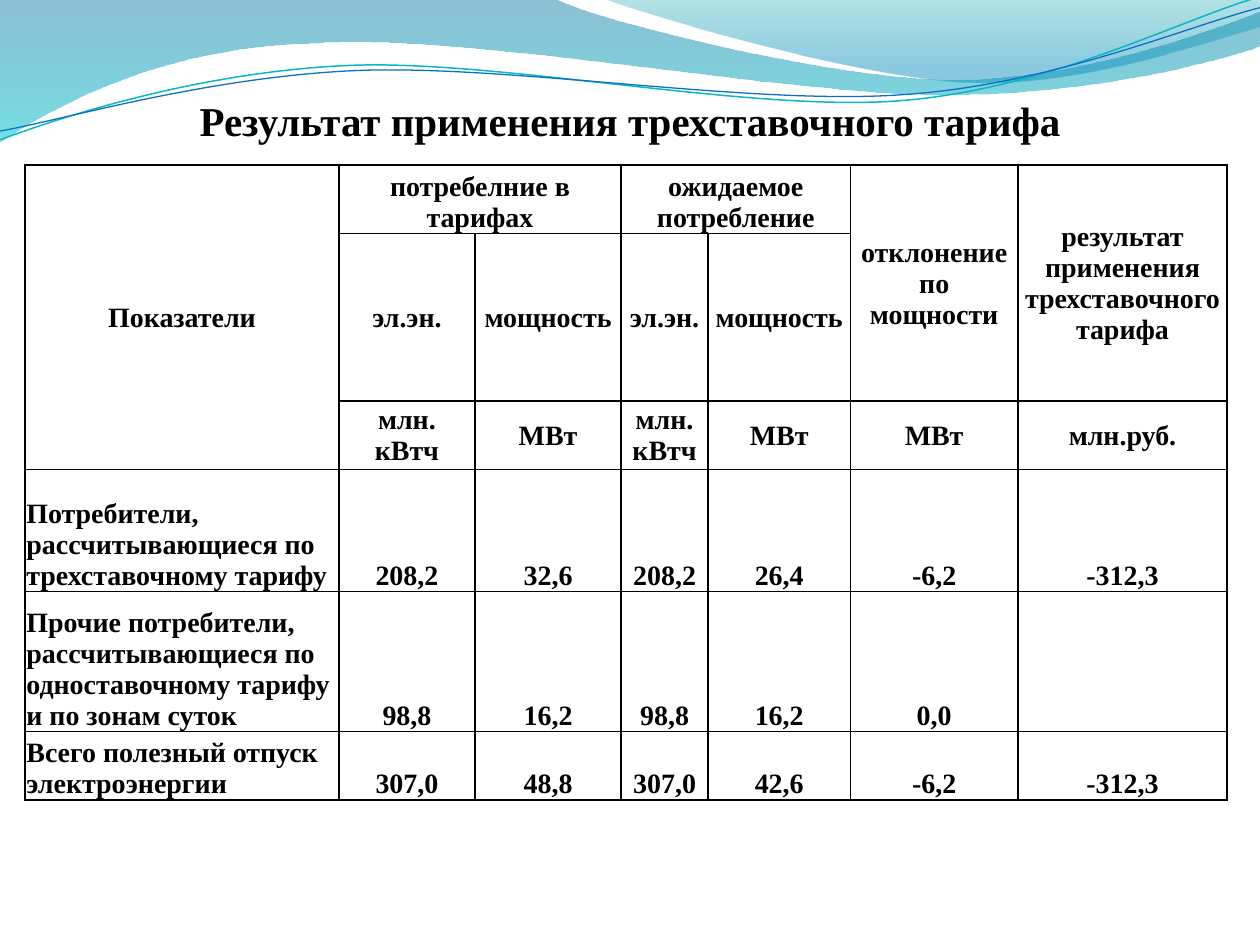
"""Build a slide with a three-rate tariff results table under a wave header."""
from math import cos, radians, sin
from lxml.etree import SubElement
from pptx import Presentation
from pptx.dml.color import RGBColor
from pptx.enum.text import MSO_ANCHOR, PP_ALIGN
from pptx.oxml import parse_xml
from pptx.oxml.ns import nsdecls, qn
from pptx.util import Inches, Pt

BLACK = RGBColor(0, 0, 0)
WHITE = RGBColor(255, 255, 255)
DEEP_BLUE = RGBColor(0x00, 0x74, 0xA1)
CYAN = RGBColor(0x00, 0xC6, 0xCF)
TEAL = RGBColor(0x00, 0xA1, 0xA9)
SKY = RGBColor(0x00, 0x8B, 0xBF)
LINE_TEAL = RGBColor(0x0A, 0xB8, 0xBF)
LINE_BLUE = RGBColor(0x0F, 0x6F, 0xC6)
FONT = "Times New Roman"

TITLE = "Результат применения трехставочного тарифа"
HEADER = [
    ["Показатели", "потребелние в тарифах", "", "ожидаемое потребление", "",
     "отклонение по мощности", "результат применения трехставочного тарифа"],
    ["", "эл.эн.", "мощность", "эл.эн.", "мощность", "", ""],
    ["", "млн.\nкВтч", "МВт", "млн.\nкВтч", "МВт", "МВт", "млн.руб."],
]
BODY = [
    ["Потребители, рассчитывающиеся по трехставочному тарифу",
     "208,2", "32,6", "208,2", "26,4", "-6,2", "-312,3"],
    ["Прочие потребители, рассчитывающиеся по одноставочному тарифу и по зонам суток",
     "98,8", "16,2", "98,8", "16,2", "0,0", ""],
    ["Всего полезный отпуск электроэнергии",
     "307,0", "48,8", "307,0", "42,6", "-6,2", "-312,3"],
]
MERGES = [((0, 0), (2, 0)), ((0, 1), (0, 2)), ((0, 3), (0, 4)),
          ((0, 5), (1, 5)), ((0, 6), (1, 6))]
COLS = [2.49, 1.08, 1.16, 0.69, 1.13, 1.33, 1.66]
ROWS = [0.47, 1.33, 0.5, 0.97, 1.11, 0.5]

BANDS = [
    ([[(0, 0)], [(4.4, -0.01)],
      [(4.76, 0.17), (6.64, 0.63), (7.58, 0.63)],
      [(8.53, 0.63), (9.58, 0.26), (10, 0.09)], [(10.01, 0.36)],
      [(9.83, 0.44), (8.7, 0.76), (7.46, 0.75)],
      [(6.22, 0.75), (3.82, 0.28), (2.57, 0.34)],
      [(1.29, 0.36), (0.46, 0.83), (-0.01, 1.13)], [(0, 0)]],
     [(0, DEEP_BLUE, 45), (1, CYAN, 55)]),
    ([[(4.79, -0.01)],
      [(5.09, 0.11), (6.82, 0.62), (7.69, 0.65)],
      [(8.56, 0.69), (9.61, 0.32), (10, 0.21)], [(10, 0)], [(4.79, -0.01)]],
     [(0, TEAL, 30), (0.8, SKY, 45)]),
]
CURVES = [
    ([[(0, 1.11)], [(0.48, 0.93), (1.58, 0.57), (2.77, 0.52)],
      [(3.95, 0.47), (5.93, 0.89), (7.13, 0.8)],
      [(8.33, 0.71), (9.38, 0.15), (9.98, -0.02)]], LINE_TEAL, 0.85),
    ([[(0, 1.04)], [(0.47, 0.96), (1.64, 0.61), (2.83, 0.56)],
      [(4.03, 0.51), (5.97, 0.84), (7.17, 0.75)],
      [(8.36, 0.67), (9.41, 0.21), (10, 0.06)]], LINE_BLUE, 0.75),
]
TILT = -2.7
TILT_CENTER = (4.99, 0.58)
UNITS = 1000


def untilt(point):
    a = radians(-TILT)
    dx, dy = (v - c for v, c in zip(point, TILT_CENTER))
    return (TILT_CENTER[0] + dx * cos(a) - dy * sin(a),
            TILT_CENTER[1] + dx * sin(a) + dy * cos(a))


def add_wave(slide, segments, close):
    scaled = [[(round(x * UNITS), round(y * UNITS)) for x, y in seg] for seg in segments]
    start, *rest = [seg[-1] for seg in scaled]
    builder = slide.shapes.build_freeform(*start, scale=Inches(1) / UNITS)
    builder.add_line_segments(rest, close=close)
    sp = builder.convert_to_shape()
    sp.shadow.inherit = False
    left, top = (min(values) for values in zip(start, *rest))
    for line, seg in zip(list(sp._element.spPr.iter(qn("a:lnTo"))), scaled[1:]):
        if len(seg) == 1:
            continue
        line.tag = qn("a:cubicBezTo")
        end = line[0]
        for x, y in seg[:-1]:
            pt = SubElement(line, qn("a:pt"))
            pt.set("x", str(x - left))
            pt.set("y", str(y - top))
        line.append(end)
    return sp


def add_band(slide, segments, stops):
    sp = add_wave(slide, segments, True)
    sp.line.fill.background()
    sp.fill.gradient()
    sp.fill.gradient_angle = 270
    for stop, (position, color, _) in zip(sp.fill.gradient_stops, stops):
        stop.position = position
        stop.color.rgb = color
    for clr, (_, _, opacity) in zip(sp._element.spPr.iter(qn("a:srgbClr")), stops):
        SubElement(clr, qn("a:alpha")).set("val", str(opacity * 1000))


def add_curve(slide, segments, color, width):
    sp = add_wave(slide, [[untilt(pt) for pt in seg] for seg in segments], False)
    sp.rotation = TILT
    sp.fill.background()
    sp.line.color.rgb = color
    sp.line.width = Pt(width)


def write(tf, text, size=16, align=PP_ALIGN.CENTER):
    for i, line in enumerate(text.split("\n")):
        p = tf.paragraphs[0] if i == 0 else tf.add_paragraph()
        p.alignment = align
        if line:
            r = p.add_run()
            r.text = line
            r.font.name, r.font.size, r.font.bold = FONT, Pt(size), True
            r.font.color.rgb = BLACK


def format_cell(cell, anchor):
    cell.margin_left = cell.margin_right = cell.margin_top = Inches(0.01)
    cell.margin_bottom = 0
    cell.vertical_anchor = anchor
    cell.fill.solid()
    cell.fill.fore_color.rgb = WHITE
    for i, side in enumerate("LRTB"):
        cell._tc.tcPr.insert(i, parse_xml(
            f'<a:ln{side} {nsdecls("a")} w="{Pt(1)}"><a:solidFill>'
            f'<a:srgbClr val="{BLACK}"/></a:solidFill></a:ln{side}>'))


def add_results(slide):
    frame = slide.shapes.add_table(len(ROWS), len(COLS), Inches(0.2), Inches(1.31),
                                   Inches(sum(COLS)), Inches(sum(ROWS)))
    table = frame.table
    table.first_row = table.horz_banding = False
    for col, width in zip(table.columns, COLS):
        col.width = Inches(width)
    for row, height in zip(table.rows, ROWS):
        row.height = Inches(height)
    frame.width, frame.height = Inches(9.53), Inches(5.03)
    for first, last in MERGES:
        table.cell(*first).merge(table.cell(*last))
    for r, row in enumerate(HEADER + BODY):
        for c, text in enumerate(row):
            cell = table.cell(r, c)
            in_body = r >= len(HEADER)
            grouped = r == 0 and 1 <= c <= 4
            format_cell(cell, MSO_ANCHOR.BOTTOM if in_body or grouped else MSO_ANCHOR.MIDDLE)
            write(cell.text_frame, text,
                  align=PP_ALIGN.LEFT if in_body and c == 0 else PP_ALIGN.CENTER)


def add_title(slide):
    tf = slide.shapes.add_textbox(Inches(0.5), Inches(0.77), Inches(9), Inches(0.38)).text_frame
    tf.word_wrap = True
    tf.margin_left = tf.margin_right = tf.margin_bottom = 0
    tf.vertical_anchor = MSO_ANCHOR.BOTTOM
    write(tf, TITLE, size=23.4)


def main():
    prs = Presentation()
    prs.slide_width, prs.slide_height = Inches(10), Inches(7.5)
    slide = prs.slides.add_slide(prs.slide_layouts[6])
    for band in BANDS:
        add_band(slide, *band)
    for curve in CURVES:
        add_curve(slide, *curve)
    add_title(slide)
    add_results(slide)
    prs.save("out.pptx")


if __name__ == "__main__":
    main()
